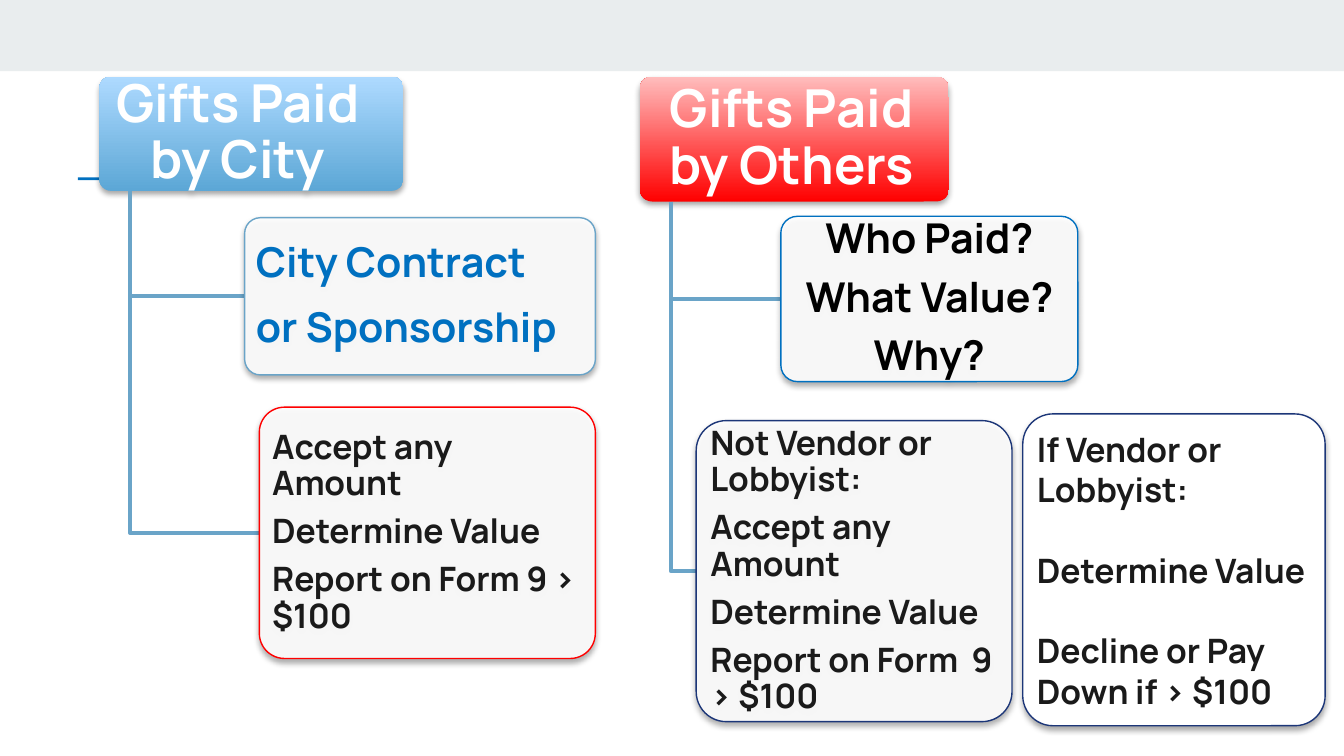
from dataclasses import dataclass

from lxml.etree import SubElement
from pptx import Presentation
from pptx.dml.color import RGBColor
from pptx.enum.shapes import MSO_SHAPE
from pptx.enum.text import MSO_ANCHOR, PP_ALIGN
from pptx.oxml.ns import qn
from pptx.util import Inches, Pt

FONT = "Manrope"
WHITE = RGBColor(0xFF, 0xFF, 0xFF)
BLACK = RGBColor(0x00, 0x00, 0x00)
INK = RGBColor(0x1A, 0x1A, 0x1A)
BAND = RGBColor(0xE9, 0xED, 0xEE)
BLUE = RGBColor(0x00, 0x70, 0xC0)
SKY = RGBColor(0x5C, 0xA7, 0xD6)
PALE = RGBColor(0xAE, 0xDA, 0xFF)
STEEL = RGBColor(0x6A, 0xA4, 0xC8)
NAVY = RGBColor(0x1C, 0x36, 0x78)
RED = RGBColor(0xFF, 0x00, 0x00)
PINK = RGBColor(0xFF, 0xBD, 0xBD)


@dataclass
class Box:
    left: float
    top: float
    width: float
    height: float
    lines: list[str]
    size: int
    color: RGBColor
    edge: RGBColor | None = None
    grad: tuple[RGBColor, RGBColor] | None = None
    center: bool = False
    inset: float = 0.04
    shift: float = 0        # extra right margin
    alpha: int = 90         # fill opacity in percent
    space: float = 0.9      # line spacing
    gap: float = 0.35       # paragraph gap as a share of the text size
    linked: bool = True     # joined to the head by an elbow


@dataclass
class Tree:
    head: Box
    kids: list[Box]


TREES = [
    Tree(
        Box(0.74, 0.57, 2.26, 0.85, ["Gifts Paid", "by City"], 28, WHITE,
            grad=(SKY, PALE), center=True, inset=0.06, shift=0.2, gap=0),
        [
            Box(1.82, 1.62, 2.61, 1.17, ["City Contract", "or Sponsorship"],
                22, BLUE, STEEL, inset=0.05, gap=0.5),
            Box(1.93, 3.03, 2.5, 1.87,
                ["Accept any Amount", "Determine Value",
                 "Report on Form 9 > $100"], 18, INK, RED),
        ],
    ),
    Tree(
        Box(4.76, 0.57, 2.3, 0.93, ["Gifts Paid", "by Others"], 28, WHITE,
            grad=(RED, PINK), center=True, inset=0.06, shift=0.04, gap=0),
        [
            Box(5.81, 1.61, 2.21, 1.23, ["Who Paid?", "What Value?", "Why?"],
                22, BLACK, BLUE, center=True, inset=0.05),
            Box(5.18, 3.13, 2.35, 2.24,
                ["Not Vendor or Lobbyist:", "Accept any Amount",
                 "Determine Value", "Report on Form  9 > $100"],
                18, INK, NAVY),
            Box(7.61, 3.08, 2.25, 2.32,
                ["If Vendor or Lobbyist:", "Determine Value",
                 "Decline or Pay Down if > $100"], 18, INK, NAVY,
                alpha=100, space=1, gap=1.2, linked=False),
        ],
    ),
]


def add_bar(slide, left: float, top: float, width: float, height: float,
            color: RGBColor) -> None:
    bar = slide.shapes.add_shape(MSO_SHAPE.RECTANGLE, Inches(left), Inches(top),
                                 Inches(width), Inches(height))
    bar.shadow.inherit = False
    bar.fill.solid()
    bar.fill.fore_color.rgb = color
    bar.line.fill.background()


def add_shade(shape) -> None:
    shape.shadow.inherit = False
    effect = shape._element.spPr.find(qn("a:effectLst"))
    outer = SubElement(effect, qn("a:outerShdw"), blurRad="40000", dist="23000",
                       dir="5400000", rotWithShape="0")
    tint = SubElement(outer, qn("a:srgbClr"), val="000000")
    SubElement(tint, qn("a:alpha"), val="35000")


def add_box(slide, box: Box) -> None:
    shape = slide.shapes.add_shape(
        MSO_SHAPE.ROUNDED_RECTANGLE, Inches(box.left), Inches(box.top),
        Inches(box.width), Inches(box.height))
    shape.adjustments[0] = 0.1

    # Fill and outline
    if box.grad:
        shape.fill.gradient()
        shape.fill.gradient_angle = 90
        for stop, color, place in zip(shape.fill.gradient_stops, box.grad, (0, 1)):
            stop.color.rgb = color
            stop.position = place
    else:
        shape.fill.solid()
        shape.fill.fore_color.rgb = WHITE
        tint = shape._element.spPr.find(qn("a:solidFill")).find(qn("a:srgbClr"))
        SubElement(tint, qn("a:alpha"), val=str(box.alpha * 1000))
    if box.edge is None:
        shape.line.fill.background()
    else:
        shape.line.color.rgb = box.edge
        shape.line.width = Pt(0.75)
    add_shade(shape)

    # Text
    frame = shape.text_frame
    frame.word_wrap = True
    frame.vertical_anchor = MSO_ANCHOR.MIDDLE
    frame.margin_left = Inches(box.inset)
    frame.margin_right = Inches(box.inset + box.shift)
    frame.margin_top = frame.margin_bottom = Inches(0.03)
    frame.text = "\n".join(box.lines)
    for para in frame.paragraphs:
        para.alignment = PP_ALIGN.CENTER if box.center else PP_ALIGN.LEFT
        para.line_spacing = box.space
        if para.text != box.lines[-1]:
            para.space_after = Pt(round(box.size * box.gap, 1))
        for run in para.runs:
            run.font.name = FONT
            run.font.size = Pt(box.size)
            run.font.bold = True
            run.font.color.rgb = box.color


def add_elbow(slide, head: Box, kid: Box) -> None:
    trunk = Inches(head.left + head.width / 10)
    base = Inches(head.top + head.height)
    level = Inches(kid.top + kid.height / 2)
    path = slide.shapes.build_freeform(trunk, base)
    path.add_line_segments([(trunk, level), (Inches(kid.left), level)], close=False)
    elbow = path.convert_to_shape()
    elbow.shadow.inherit = False
    elbow.fill.background()
    elbow.line.color.rgb = STEEL
    elbow.line.width = Pt(2)


def main() -> None:
    # A 16:9 slide
    deck = Presentation()
    deck.slide_width = Inches(10)
    deck.slide_height = Inches(10 * 9 / 16)
    slide = deck.slides.add_slide(deck.slide_layouts[6])

    # Top band and the small accent beside the first head
    add_bar(slide, 0, 0, 10, 0.53, BAND)
    add_bar(slide, 0.58, 1.32, 0.2, 0.02, BLUE)

    # The two trees
    for tree in TREES:
        add_box(slide, tree.head)
        for kid in tree.kids:
            if kid.linked:
                add_elbow(slide, tree.head, kid)
            add_box(slide, kid)

    deck.save("out.pptx")


if __name__ == "__main__":
    main()
